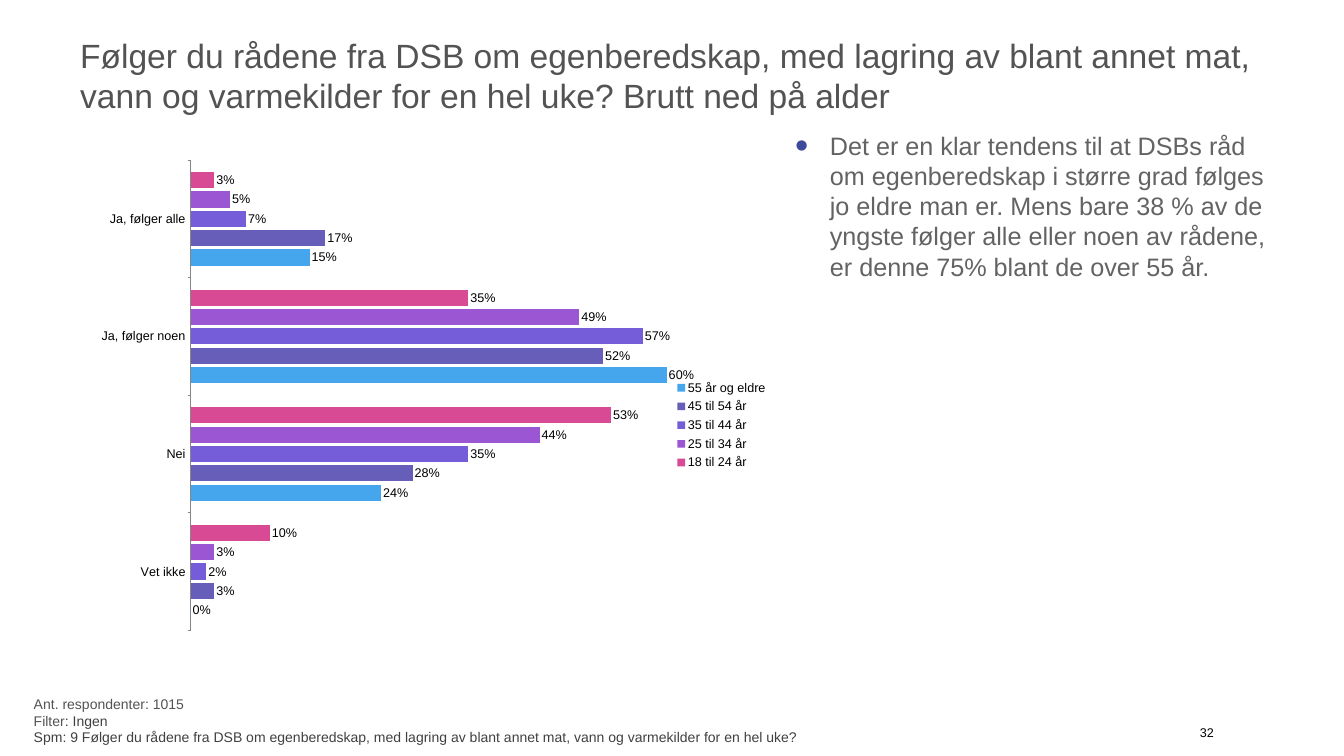
from lxml import etree
from pptx import Presentation
from pptx.chart.data import CategoryChartData
from pptx.dml.color import RGBColor
from pptx.enum.chart import XL_CHART_TYPE, XL_LABEL_POSITION, XL_LEGEND_POSITION, XL_TICK_MARK
from pptx.enum.text import MSO_ANCHOR, MSO_AUTO_SIZE, PP_ALIGN
from pptx.oxml import parse_xml
from pptx.oxml.ns import nsdecls, qn
from pptx.util import Inches, Pt

BAR_CLUSTERED = XL_CHART_TYPE.BAR_CLUSTERED
OUTSIDE_END = XL_LABEL_POSITION.OUTSIDE_END
LEGEND_RIGHT = XL_LEGEND_POSITION.RIGHT
TICK_OUT, TICK_NONE = XL_TICK_MARK.OUTSIDE, XL_TICK_MARK.NONE
MIDDLE = MSO_ANCHOR.MIDDLE
NO_AUTOFIT = MSO_AUTO_SIZE.NONE
CENTER, LEFT = PP_ALIGN.CENTER, PP_ALIGN.LEFT

FONT = "Arial"
COLORS = {
    "title": "535353", "footer": "535353", "filter": "404040", "body": "626362",
    "bullet": "3D4A9A", "black": "000000", "axis": "868686",
}
CATEGORIES = ["Ja, følger alle", "Ja, følger noen", "Nei", "Vet ikke"]
AGE_GROUPS = [
    ("18 til 24 år", "D94A94", (0.03, 0.35, 0.53, 0.10)),
    ("25 til 34 år", "9B57D3", (0.05, 0.49, 0.44, 0.03)),
    ("35 til 44 år", "755DD9", (0.07, 0.57, 0.35, 0.02)),
    ("45 til 54 år", "665EB8", (0.17, 0.52, 0.28, 0.03)),
    ("55 år og eldre", "45A5ED", (0.15, 0.60, 0.24, 0)),
]
TITLE = ("Følger du rådene fra DSB om egenberedskap, med lagring av blant annet mat, "
         "vann og varmekilder for en hel uke? Brutt ned på alder")
FINDING = ("Det er en klar tendens til at DSBs råd om egenberedskap i større grad følges "
           "jo eldre man er. Mens bare 38 % av de yngste følger alle eller noen av rådene, "
           "er denne 75% blant de over 55 år.")
QUESTION = ("Spm: 9 Følger du rådene fra DSB om egenberedskap, med lagring av blant annet "
            "mat, vann og varmekilder for en hel uke?")


def inches(box):
    """Turn a box of left, top, width and height into lengths."""
    return [Inches(value) for value in box]


def style_font(font, size, color):
    """Set the typeface, size and colour of a font."""
    font.name, font.size = FONT, Pt(size)
    font.color.rgb = RGBColor.from_string(COLORS[color])


def set_frame(frame, inset):
    """Make a text frame wrap at a fixed size with narrow insets."""
    frame.word_wrap, frame.auto_size = True, NO_AUTOFIT
    frame.margin_left = frame.margin_right = Inches(inset)
    frame.margin_top = frame.margin_bottom = Inches(inset)


def place_title(slide, box):
    """Fill and format the title placeholder."""
    title = slide.shapes.title
    title.left, title.top, title.width, title.height = inches(box)
    frame = title.text_frame
    set_frame(frame, 0.06)
    frame.vertical_anchor = MIDDLE
    frame.text = TITLE
    frame.paragraphs[0].alignment = LEFT
    style_font(frame.paragraphs[0].runs[0].font, 48, "title")


def add_finding(slide, box):
    """Add the bulleted finding beside the chart."""
    frame = slide.shapes.add_textbox(*inches(box)).text_frame
    set_frame(frame, 0.1)
    frame.margin_top = Inches(0.05)
    paragraph = frame.paragraphs[0]
    paragraph.text = FINDING
    properties = paragraph._p.get_or_add_pPr()
    properties.set("marL", str(Inches(0.69)))
    properties.set("indent", str(-Inches(0.69)))
    color = etree.SubElement(properties, qn("a:buClr"))
    etree.SubElement(color, qn("a:srgbClr"), val=COLORS["bullet"])
    etree.SubElement(properties, qn("a:buSzPct"), val="150000")
    etree.SubElement(properties, qn("a:buFont"), typeface=FONT)
    etree.SubElement(properties, qn("a:buChar"), char="•")
    style_font(paragraph.runs[0].font, 36, "body")


def add_footer(slide, box):
    """Add the respondent count, filter and question wording."""
    frame = slide.shapes.add_textbox(*inches(box)).text_frame
    set_frame(frame, 0.06)
    frame.vertical_anchor = MIDDLE
    lines = [
        [("Ant. respondenter: 1015", "footer")],
        [("Filter", "footer"), (": Ingen", "filter")],
        [(QUESTION, "filter")],
    ]
    for index, line in enumerate(lines):
        paragraph = frame.add_paragraph() if index else frame.paragraphs[0]
        for text, color in line:
            run = paragraph.add_run()
            run.text = text
            style_font(run.font, 20, color)


def add_page_number(slide, box):
    """Add the page number."""
    frame = slide.shapes.add_textbox(*inches(box)).text_frame
    set_frame(frame, 0.06)
    frame.word_wrap = False
    frame.text = "32"
    frame.paragraphs[0].alignment = CENTER
    style_font(frame.paragraphs[0].runs[0].font, 18, "black")


def manual_layout(x, y, width, height, inner=False):
    """Build a chart layout from fractions of the chart area."""
    target = '<c:layoutTarget val="inner"/>' if inner else ""
    return parse_xml(
        f'<c:layout {nsdecls("c")}><c:manualLayout>{target}'
        '<c:xMode val="edge"/><c:yMode val="edge"/>'
        f'<c:x val="{x}"/><c:y val="{y}"/><c:w val="{width}"/><c:h val="{height}"/>'
        '</c:manualLayout></c:layout>')


def add_age_chart(slide, box):
    """Add the bar chart of answers by age group."""
    data = CategoryChartData(number_format="0%")
    data.categories = CATEGORIES
    for name, _, values in AGE_GROUPS:
        data.add_series(name, values)
    chart = slide.shapes.add_chart(BAR_CLUSTERED, *inches(box), data).chart
    style_font(chart.font, 18, "black")
    chart.has_title = False

    plot = chart.plots[0]
    plot.gap_width, plot.overlap, plot.vary_by_categories = 150, -20, False
    for series, (_, color, _) in zip(plot.series, AGE_GROUPS):
        series.format.fill.solid()
        series.format.fill.fore_color.rgb = RGBColor.from_string(color)
        labels = series.data_labels
        labels.show_value = True
        labels.number_format, labels.number_format_is_linked = "0%", False
        labels.position = OUTSIDE_END
        style_font(labels.font, 18, "black")

    categories, values = chart.category_axis, chart.value_axis
    categories.reverse_order = True
    categories.major_tick_mark, categories.minor_tick_mark = TICK_OUT, TICK_NONE
    categories.format.line.color.rgb = RGBColor.from_string(COLORS["axis"])
    values.minimum_scale, values.maximum_scale = 0, 0.7
    values.has_major_gridlines = False
    values.tick_labels.number_format = "0%"
    values.tick_labels.number_format_is_linked = False
    values.visible = False

    chart.has_legend = True
    legend = chart.legend
    legend.position, legend.include_in_layout = LEGEND_RIGHT, False
    style_font(legend.font, 18, "black")
    legend_position = legend._element.find(qn("c:legendPos"))
    legend_position.addnext(manual_layout(0.86, 0.43, 0.13, 0.18))

    plot_area = chart._chartSpace.chart.plotArea
    for layout in plot_area.findall(qn("c:layout")):
        plot_area.remove(layout)
    plot_area.insert(0, manual_layout(0.214, 0.033, 0.744, 0.864, inner=True))


def main():
    """Build and save the presentation."""
    presentation = Presentation()
    presentation.slide_width, presentation.slide_height = Inches(26.67), Inches(15)
    slide = presentation.slides.add_slide(presentation.slide_layouts[5])
    place_title(slide, (1.53, 0.47, 23.66, 2.04))
    add_page_number(slide, (23.74, 14.32, 0.42, 0.42))
    add_footer(slide, (0.61, 13.86, 23.66, 0.87))
    add_finding(slide, (15.68, 2.53, 9.56, 10.79))
    add_age_chart(slide, (0.61, 2.82, 14.82, 10.8))
    presentation.save("out.pptx")


if __name__ == "__main__":
    main()
